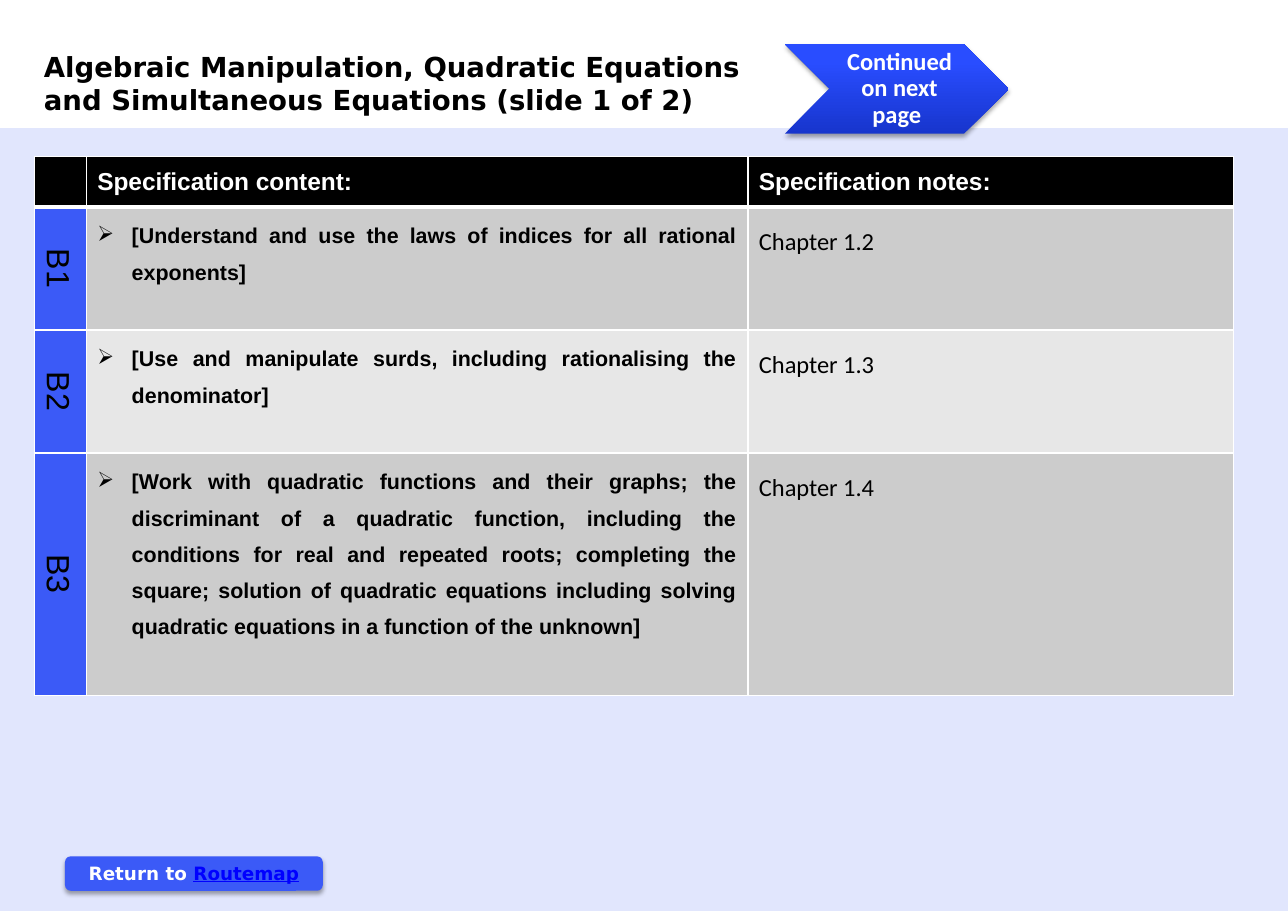
"""Build the algebra specification slide with its table, arrow and button."""
from dataclasses import dataclass

from lxml import etree
from pptx import Presentation
from pptx.dml.color import RGBColor
from pptx.enum.shapes import MSO_SHAPE
from pptx.enum.text import MSO_ANCHOR, PP_ALIGN
from pptx.oxml.ns import qn
from pptx.util import Pt

RECT, ROUND, CHEVRON = MSO_SHAPE.RECTANGLE, MSO_SHAPE.ROUNDED_RECTANGLE, MSO_SHAPE.CHEVRON
LEFT, CENTER, JUSTIFY = PP_ALIGN.LEFT, PP_ALIGN.CENTER, PP_ALIGN.JUSTIFY
MIDDLE = MSO_ANCHOR.MIDDLE
COLORS = {
    "white": "FFFFFF", "black": "000000", "blue": "3B5AF7", "link": "0000FF",
    "dark": "CCCCCC", "light": "E7E7E7", "deep": "1735CD", "bright": "294DFF",
}
WIDTH, HEIGHT = 841.7, 595.4
COLUMNS = (33.8, 432.4, 317.3)
HEADS = ("", "Specification content:", "Specification notes:")


@dataclass
class Box:
    left: float
    top: float
    width: float
    height: float

    def place(self) -> list:
        return [Pt(v) for v in (self.left, self.top, self.width, self.height)]


@dataclass
class Style:
    size: float
    name: str
    color: str = "black"
    bold: bool = False
    align: int = LEFT
    space: float = 1.0
    bullet: str = ""


@dataclass
class Topic:
    code: str
    content: str
    notes: str
    height: float


HEAD = Style(16, "Arial", "white", True)
CODE = Style(21, "Arial", align=CENTER)
CONTENT = Style(14, "Arial", bold=True, align=JUSTIFY, space=1.5, bullet="➢")
NOTES = Style(16, "Calibri", align=JUSTIFY, space=1.5)
TITLE = Style(18, "DejaVu Sans", bold=True)
NEXT = Style(16, "Calibri", "white", True, CENTER, 0.9)
BUTTON = Style(12, "DejaVu Sans", "white", True, CENTER)

TOPICS = (
    Topic("B1", "[Understand and use the laws of indices for all rational exponents]",
          "Chapter 1.2", 80.4),
    Topic("B2", "[Use and manipulate surds, including rationalising the denominator]",
          "Chapter 1.3", 80.4),
    Topic("B3", "[Work with quadratic functions and their graphs; the discriminant of a "
          "quadratic function, including the conditions for real and repeated roots; "
          "completing the square; solution of quadratic equations including solving "
          "quadratic equations in a function of the unknown]",
          "Chapter 1.4", 158.4),
)


def rgb(name: str) -> RGBColor:
    return RGBColor.from_string(COLORS[name])


def node(parent, tag: str, **attrs):
    return etree.SubElement(parent, qn(tag), {k: str(v) for k, v in attrs.items()})


def format_text(para, style: Style) -> None:
    para.alignment = style.align
    para.line_spacing = style.space
    if style.bullet:
        props = para._p.get_or_add_pPr()
        props.set("marL", str(Pt(22.5)))
        props.set("indent", str(-Pt(22.5)))
        node(props, "a:buChar", char=style.bullet)
    font = para.font
    font.size, font.name, font.bold = Pt(style.size), style.name, style.bold
    font.color.rgb = rgb(style.color)


def write(frame, text: str, style: Style) -> None:
    frame.text = text
    for para in frame.paragraphs:
        format_text(para, style)


def add_block(shapes, kind: int, box: Box, color: str):
    block = shapes.add_shape(kind, *box.place())
    block.shadow.inherit = False
    block.fill.solid()
    block.fill.fore_color.rgb = rgb(color)
    block.line.fill.background()
    return block


def add_shadow(block) -> None:
    effects = block._element.spPr.find(qn("a:effectLst"))
    shade = node(effects, "a:outerShdw", blurRad=Pt(3.1), dist=Pt(1.8),
                 dir=5400000, rotWithShape=0)
    node(node(shade, "a:srgbClr", val=COLORS["black"]), "a:alpha", val=35000)


def add_band(shapes) -> None:
    band = add_block(shapes, RECT, Box(0, 83.8, WIDTH, HEIGHT - 83.8), "blue")
    tint = band._element.spPr.find(qn("a:solidFill"))[0]
    node(tint, "a:alpha", val=15000)


def add_button(shapes) -> None:
    button = add_block(shapes, ROUND, Box(42.5, 559.7, 168.5, 22.5), "blue")
    add_shadow(button)
    frame = button.text_frame
    frame.vertical_anchor = MIDDLE
    para = frame.paragraphs[0]
    format_text(para, BUTTON)
    for text, color in (("Return to ", "white"), ("Routemap", "link")):
        run = para.add_run()
        run.text = text
        run.font.color.rgb = rgb(color)
        run.font.underline = color == "link"


def add_arrow(shapes) -> None:
    group = shapes.add_group_shape().shapes
    arrow = add_block(group, CHEVRON, Box(513, 28.8, 146.2, 58.5), "bright")
    add_shadow(arrow)
    arrow.fill.gradient()
    arrow.fill.gradient_angle = 90
    for stop, color, place in zip(arrow.fill.gradient_stops, ("deep", "bright"), (0, 0.8)):
        stop.color.rgb, stop.position = rgb(color), place
    frame = group.add_textbox(*Box(542.2, 28.8, 87.8, 58.5).place()).text_frame
    frame.word_wrap = True
    frame.vertical_anchor = MIDDLE
    frame.margin_left = Pt(5)
    frame.margin_top = frame.margin_right = frame.margin_bottom = Pt(1.5)
    write(frame, "Continued on next page ", NEXT)


def fill_cell(cell, text: str, style: Style, color: str, edge: float = 1) -> None:
    props = cell._tc.get_or_add_tcPr()
    for side in "LRTB":
        line = node(props, f"a:ln{side}", w=Pt(edge if side == "B" else 1))
        node(node(line, "a:solidFill"), "a:srgbClr", val=COLORS["white"])
    cell.fill.solid()
    cell.fill.fore_color.rgb = rgb(color)
    if style is CODE:
        props.set("vert", "vert")
    write(cell.text_frame, text, style)


def add_topics(shapes) -> None:
    box = Box(22.6, 102.2, sum(COLUMNS), 33.1 + sum(t.height for t in TOPICS))
    table = shapes.add_table(len(TOPICS) + 1, len(COLUMNS), *box.place()).table
    table.horz_banding = False
    for column, width in zip(table.columns, COLUMNS):
        column.width = Pt(width)
    table.rows[0].height = Pt(33.1)
    for cell, text in zip(table.rows[0].cells, HEADS):
        fill_cell(cell, text, HEAD, "black", 3)
        cell.vertical_anchor = MIDDLE
    for index, topic in enumerate(TOPICS):
        row = table.rows[index + 1]
        row.height = Pt(topic.height)
        shade = "light" if index % 2 else "dark"
        code, content, notes = row.cells
        fill_cell(code, topic.code, CODE, "blue")
        fill_cell(content, topic.content, CONTENT, shade)
        fill_cell(notes, topic.notes, NOTES, shade)


def add_title(shapes) -> None:
    frame = shapes.add_textbox(*Box(21.6, 28.8, 475.2, 51.1).place()).text_frame
    frame.word_wrap = False
    write(frame, "Algebraic Manipulation, Quadratic Equations\n"
          "and Simultaneous Equations (slide 1 of 2)", TITLE)


def main() -> None:
    deck = Presentation()
    deck.slide_width, deck.slide_height = Pt(WIDTH), Pt(HEIGHT)
    shapes = deck.slides.add_slide(deck.slide_layouts[6]).shapes
    for draw in (add_band, add_button, add_arrow, add_topics, add_title):
        draw(shapes)
    deck.save("out.pptx")


if __name__ == "__main__":
    main()
